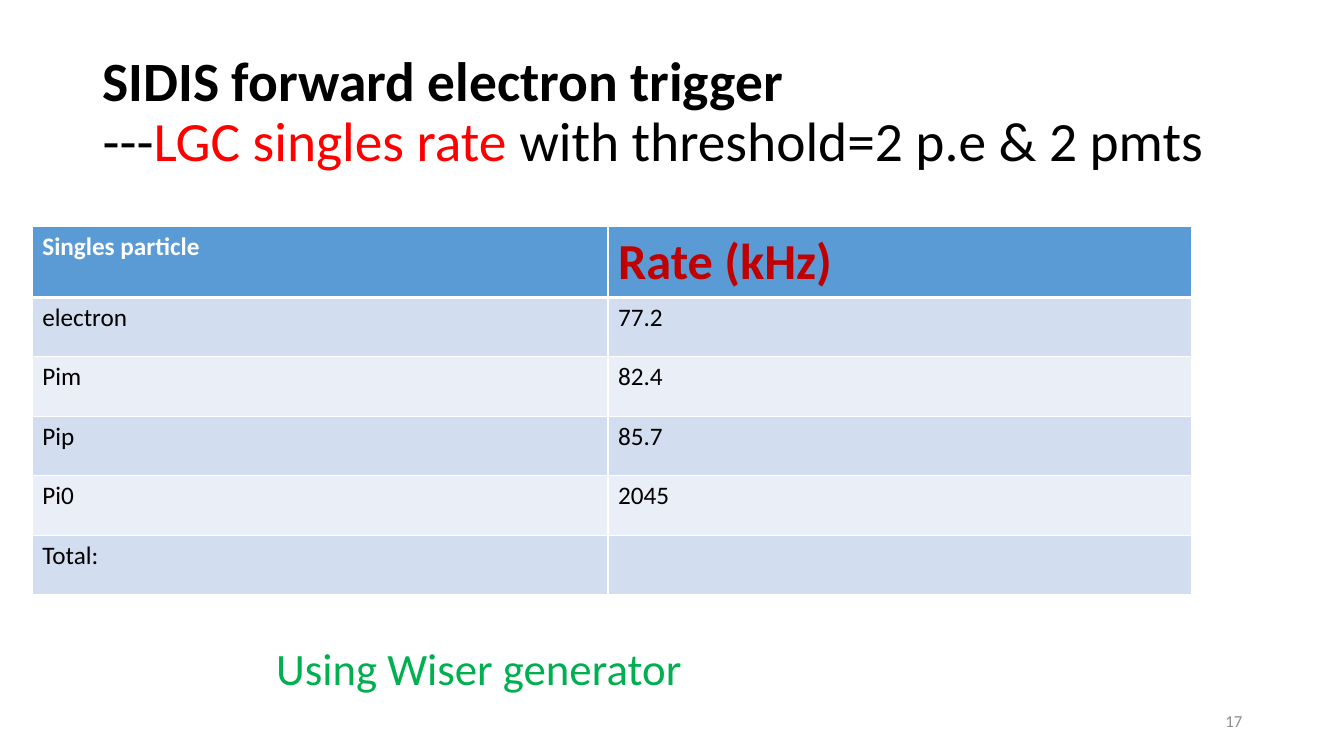
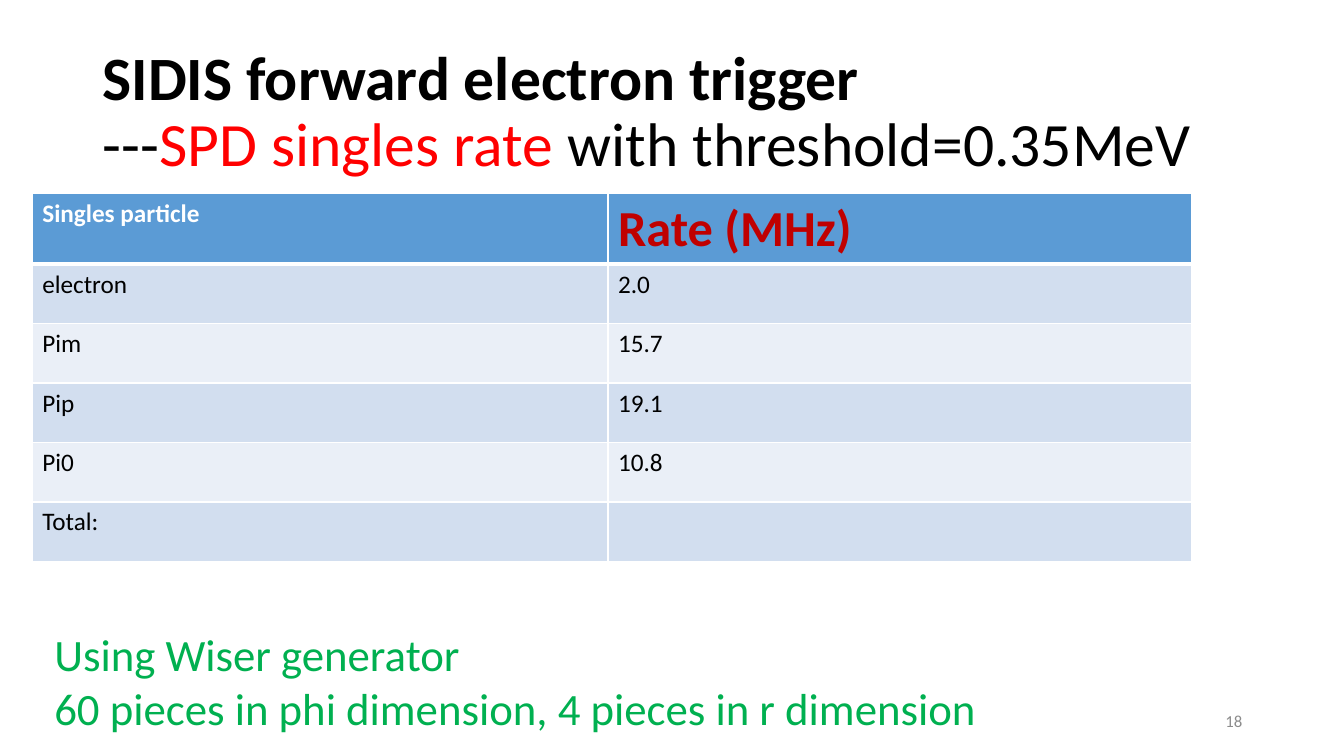
from dataclasses import dataclass

from lxml.etree import SubElement
from pptx import Presentation
from pptx.dml.color import RGBColor
from pptx.enum.text import MSO_ANCHOR, MSO_AUTO_SIZE, PP_ALIGN
from pptx.oxml.ns import qn
from pptx.util import Inches, Pt


@dataclass(frozen=True)
class Theme:
    font: str = "Calibri"
    black: str = "000000"
    white: str = "FFFFFF"
    red: str = "FF0000"
    dark_red: str = "C00000"
    green: str = "00B050"
    grey: str = "8C8C8C"
    header_fill: str = "5B9BD5"
    band_fills: tuple[str, str] = ("D2DEEF", "EAEFF7")
    body_size: float = 18
    rate_size: float = 36
    remark_size: float = 32
    number_size: float = 12
    thin_border: float = 1
    thick_border: float = 3


@dataclass(frozen=True)
class RateSlide:
    number: int
    title_size: float
    subject: str
    condition: str
    unit: str
    rates: tuple[str, ...]
    table_top: float
    remarks: tuple[str, ...]
    remark_box: tuple[float, float, float, float]


THEME = Theme()
PARTICLES = ("electron", "Pim", "Pip", "Pi0", "Total:")
COLUMN_WIDTHS = (5.71, 5.79)
HEADER_HEIGHT = 0.7
ROW_HEIGHT = 0.59
TITLE_BOX = (0.92, 0.4, 11.5, 1.45)
NUMBER_BOX = (9.42, 6.95, 3, 0.4)
TABLE_LEFT = 0.32

RATE_SLIDES = (
    RateSlide(
        number=17,
        title_size=39.6,
        subject="LGC singles rate ",
        condition="with threshold=2 p.e & 2 pmts",
        unit="kHz",
        rates=("77.2", "82.4", "85.7", "2045", ""),
        table_top=2.25,
        remarks=("Using Wiser generator",),
        remark_box=(2.64, 6.31, 6.66, 0.64),
    ),
    RateSlide(
        number=18,
        title_size=44,
        subject="SPD singles rate ",
        condition="with threshold=0.35MeV",
        unit="MHz",
        rates=("2.0", "15.7", "19.1", "10.8", ""),
        table_top=1.92,
        remarks=(
            "Using Wiser generator",
            "60 pieces in phi dimension, 4 pieces in r dimension",
        ),
        remark_box=(0.44, 6.17, 10.85, 1.18),
    ),
)


def add_text(paragraph, text: str, *, size: float, color: str, bold: bool = False) -> None:
    run = paragraph.add_run()
    run.text = text
    run.font.name = THEME.font
    run.font.size = Pt(size)
    run.font.bold = bold
    run.font.color.rgb = RGBColor.from_string(color)


def add_text_frame(slide, box: tuple[float, float, float, float], anchor=MSO_ANCHOR.TOP):
    """Add a wrapping text box and return its text frame."""
    text_frame = slide.shapes.add_textbox(*map(Inches, box)).text_frame
    text_frame.word_wrap = True
    text_frame.vertical_anchor = anchor
    return text_frame


def add_title(slide, content: RateSlide) -> None:
    paragraph = add_text_frame(slide, TITLE_BOX, MSO_ANCHOR.MIDDLE).paragraphs[0]
    paragraph.line_spacing = 0.9
    size = content.title_size
    add_text(paragraph, "SIDIS forward electron trigger", size=size, color=THEME.black, bold=True)
    paragraph.add_line_break()
    add_text(paragraph, "---", size=size, color=THEME.black)
    add_text(paragraph, content.subject, size=size, color=THEME.red)
    add_text(paragraph, content.condition, size=size, color=THEME.black)


def set_borders(cell, top: float, bottom: float) -> None:
    """Draw white cell borders; call before filling, as lines precede the fill in the XML."""
    properties = cell._tc.get_or_add_tcPr()
    widths = {"L": THEME.thin_border, "R": THEME.thin_border, "T": top, "B": bottom}
    for side, width in widths.items():
        line = SubElement(properties, qn(f"a:ln{side}"), w=str(Pt(width)))
        fill = SubElement(line, qn("a:solidFill"))
        SubElement(fill, qn("a:srgbClr"), val=THEME.white)


def add_rate_table(slide, content: RateSlide) -> None:
    rows = [("Singles particle", f"Rate ({content.unit})"), *zip(PARTICLES, content.rates)]
    heights = [HEADER_HEIGHT] + [ROW_HEIGHT] * len(PARTICLES)
    table = slide.shapes.add_table(
        len(rows), len(COLUMN_WIDTHS), Inches(TABLE_LEFT), Inches(content.table_top),
        Inches(sum(COLUMN_WIDTHS)), Inches(sum(heights)),
    ).table
    for column, width in zip(table.columns, COLUMN_WIDTHS):
        column.width = Inches(width)
    header_styles = (
        {"size": THEME.body_size, "color": THEME.white, "bold": True},
        {"size": THEME.rate_size, "color": THEME.dark_red, "bold": True},
    )
    body_style = {"size": THEME.body_size, "color": THEME.black}
    for row_index, (texts, height) in enumerate(zip(rows, heights)):
        table.rows[row_index].height = Inches(height)
        is_header = row_index == 0
        fill = THEME.header_fill if is_header else THEME.band_fills[(row_index - 1) % 2]
        top = THEME.thick_border if row_index == 1 else THEME.thin_border
        bottom = THEME.thick_border if is_header else THEME.thin_border
        for column_index, text in enumerate(texts):
            cell = table.cell(row_index, column_index)
            set_borders(cell, top, bottom)
            cell.fill.solid()
            cell.fill.fore_color.rgb = RGBColor.from_string(fill)
            if text:
                style = header_styles[column_index] if is_header else body_style
                add_text(cell.text_frame.paragraphs[0], text, **style)


def add_remarks(slide, content: RateSlide) -> None:
    """Write the green remarks below the table."""
    text_frame = add_text_frame(slide, content.remark_box)
    text_frame.auto_size = MSO_AUTO_SIZE.SHAPE_TO_FIT_TEXT
    for index, remark in enumerate(content.remarks):
        paragraph = text_frame.add_paragraph() if index else text_frame.paragraphs[0]
        add_text(paragraph, remark, size=THEME.remark_size, color=THEME.green)


def add_slide_number(slide, number: int) -> None:
    paragraph = add_text_frame(slide, NUMBER_BOX, MSO_ANCHOR.MIDDLE).paragraphs[0]
    paragraph.alignment = PP_ALIGN.RIGHT
    add_text(paragraph, str(number), size=THEME.number_size, color=THEME.grey)


def main() -> None:
    presentation = Presentation()
    presentation.slide_width = Inches(13.33)
    presentation.slide_height = Inches(7.5)
    blank_layout = presentation.slide_layouts[6]
    for content in RATE_SLIDES:
        slide = presentation.slides.add_slide(blank_layout)
        add_title(slide, content)
        add_rate_table(slide, content)
        add_remarks(slide, content)
        add_slide_number(slide, content.number)
    presentation.save("out.pptx")


if __name__ == "__main__":
    main()
